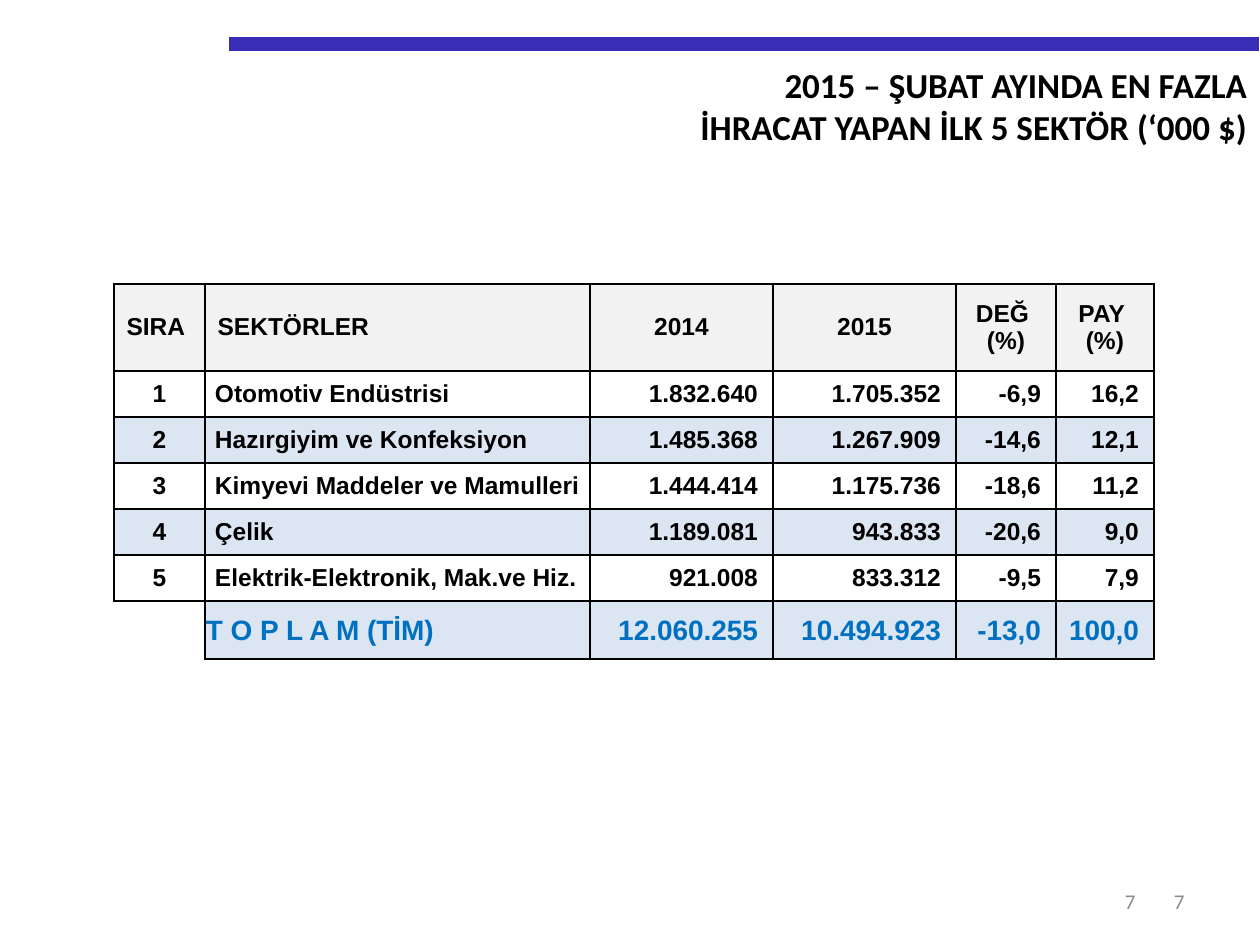
from dataclasses import dataclass

from lxml import etree
from pptx import Presentation
from pptx import util as u
from pptx.dml.color import RGBColor
from pptx.enum import shapes, text
from pptx.oxml.ns import qn

LEFT, MID, RIGHT = text.PP_ALIGN.LEFT, text.PP_ALIGN.CENTER, text.PP_ALIGN.RIGHT

HEADS = ["SIRA", "SEKTÖRLER", "2014", "2015", "DEĞ \n(%)", "PAY \n(%)"]
ROWS = [
    ["1", "Otomotiv Endüstrisi", "1.832.640", "1.705.352", "-6,9", "16,2"],
    ["2", "Hazırgiyim ve Konfeksiyon", "1.485.368", "1.267.909", "-14,6", "12,1"],
    ["3", "Kimyevi Maddeler ve Mamulleri", "1.444.414", "1.175.736", "-18,6", "11,2"],
    ["4", "Çelik", "1.189.081", "943.833", "-20,6", "9,0"],
    ["5", "Elektrik-Elektronik, Mak.ve Hiz.", "921.008", "833.312", "-9,5", "7,9"],
]
TOTAL = ["", "T O P L A M (TİM)", "12.060.255", "10.494.923", "-13,0", "100,0"]
COLS = [91, 385, 183, 183, 100, 98]
TALL = [87] + [46] * len(ROWS) + [58]


@dataclass(frozen=True)
class Theme:
    ink: str = "000000"
    bar: str = "382EB8"
    head: str = "F2F2F2"
    band: str = "DCE6F2"
    total: str = "0070C0"
    grey: str = "8C8C8C"
    sans: str = "Calibri"
    grid: str = "Arial"
    title: int = 20
    body: int = 14
    sum: int = 16
    page: int = 12


T = Theme()


def px(n):
    return u.Emu(round(n * 914400 / 126))


def write(frame, words, size=T.body, font=T.grid, color=T.ink, bold=True, align=LEFT):
    for i, line in enumerate(words.split("\n")):
        para = frame.paragraphs[0] if i == 0 else frame.add_paragraph()
        para.alignment = align
        run = para.add_run()
        run.text = line
        run.font.size = u.Pt(size)
        run.font.name = font
        run.font.bold = bold
        run.font.color.rgb = RGBColor.from_string(color)


def add_bar(slide):
    line = slide.shapes.add_connector(
        shapes.MSO_CONNECTOR.STRAIGHT, px(229), px(44), px(1259), px(44))
    line.line.width = u.Pt(8.5)
    line.line.color.rgb = RGBColor.from_string(T.bar)
    etree.SubElement(line._element.spPr, qn("a:effectLst"))


def add_title(slide, words):
    title = slide.shapes.title
    title.left, title.top, title.width, title.height = map(px, (134, 57, 1126, 97))
    title.text_frame.vertical_anchor = text.MSO_ANCHOR.TOP
    write(title.text_frame, words, size=T.title, font=T.sans, align=RIGHT)


def add_page(slide, left, width):
    frame = slide.shapes.add_textbox(px(left), px(876), px(width), px(50)).text_frame
    frame.word_wrap = True
    frame.vertical_anchor = text.MSO_ANCHOR.MIDDLE
    write(frame, "7", size=T.page, font=T.sans, color=T.grey, bold=False, align=RIGHT)


def add_edges(cell, shown):
    props = cell._tc.get_or_add_tcPr()
    for side in "LRTB":
        edge = etree.SubElement(props, qn("a:ln" + side), w=str(u.Pt(1)))
        if side in shown:
            fill = etree.SubElement(edge, qn("a:solidFill"))
            etree.SubElement(fill, qn("a:srgbClr"), val=T.ink)
        else:
            etree.SubElement(edge, qn("a:noFill"))


def set_cell(cell, words, fill=None, pad=None, edges="LRTB", **form):
    add_edges(cell, edges)
    if fill:
        cell.fill.solid()
        cell.fill.fore_color.rgb = RGBColor.from_string(fill)
    else:
        cell.fill.background()
    cell.vertical_anchor = text.MSO_ANCHOR.MIDDLE
    if pad:
        cell.margin_left, cell.margin_right = map(px, pad)
        cell.margin_top, cell.margin_bottom = px(1), 0
    if words:
        write(cell.text_frame, words, **form)


def add_grid(slide):
    grid = slide.shapes.add_table(
        len(TALL), len(COLS), px(114), px(284), px(sum(COLS)), px(sum(TALL))).table
    grid.first_row = grid.horz_banding = False
    for col, wide in zip(grid.columns, COLS):
        col.width = px(wide)
    for row, tall in zip(grid.rows, TALL):
        row.height = px(tall)

    for c, words in enumerate(HEADS):
        set_cell(grid.cell(0, c), words, fill=T.head, align=LEFT if c < 2 else MID)
    pads = [None, (10, 1)] + [(1, 15)] * 4
    sides = [MID, LEFT] + [RIGHT] * 4
    for r, row in enumerate(ROWS, 1):
        for c, words in enumerate(row):
            set_cell(grid.cell(r, c), words, fill=None if r % 2 else T.band,
                     pad=pads[c], align=sides[c])
    last = len(TALL) - 1
    set_cell(grid.cell(last, 0), "", edges="RT")
    for c, words in enumerate(TOTAL[1:], 1):
        set_cell(grid.cell(last, c), words, fill=T.band, pad=(1, 1) if c == 1 else pads[c],
                 align=sides[c], size=T.sum, color=T.total)


def main():
    deck = Presentation()
    deck.slide_width, deck.slide_height = px(1260), px(945)
    slide = deck.slides.add_slide(deck.slide_layouts[5])
    add_page(slide, 903, 294)
    add_bar(slide)
    add_page(slide, 883, 265)
    add_title(slide, "2015 – ŞUBAT AYINDA EN FAZLA\nİHRACAT YAPAN İLK 5 SEKTÖR (‘000 $)")
    add_grid(slide)
    deck.save("out.pptx")


if __name__ == "__main__":
    main()
